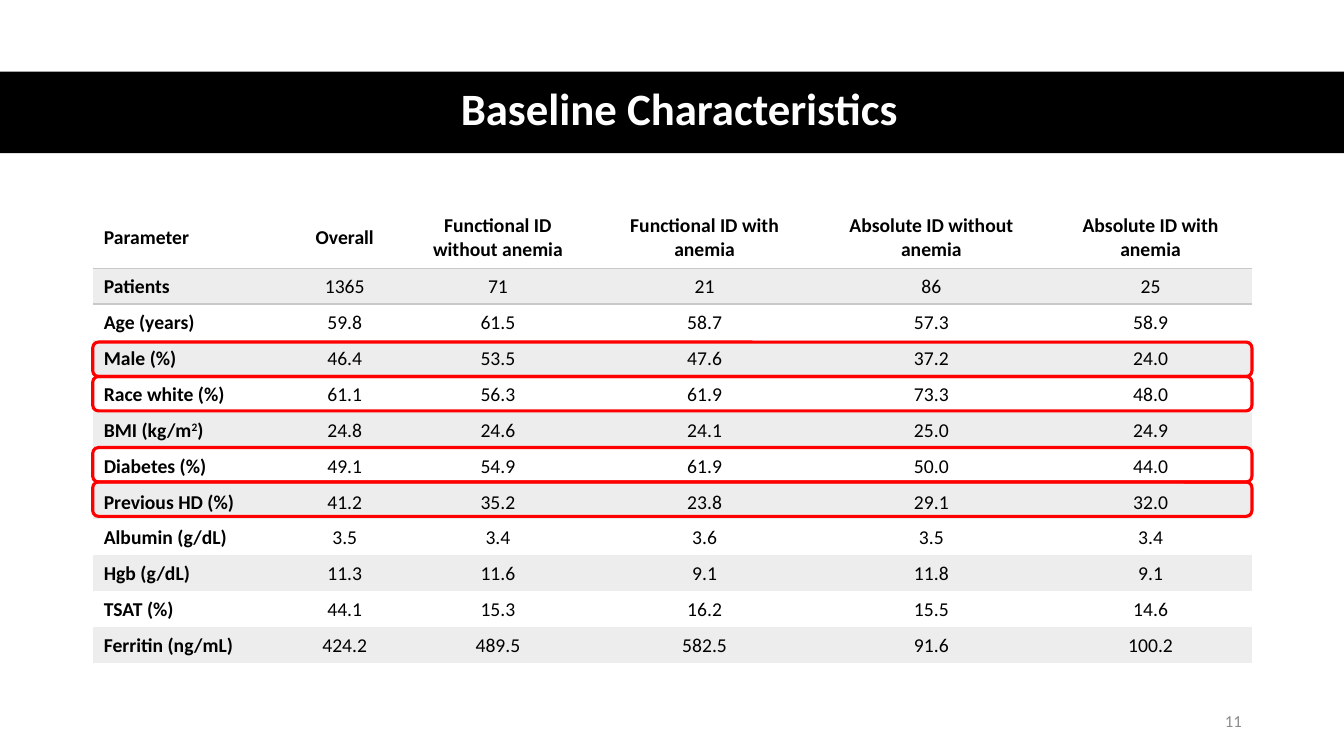
import dataclasses

import lxml.etree
import pptx
import pptx.dml.color
import pptx.enum.shapes
import pptx.enum.text
import pptx.oxml.ns
import pptx.util

ALIGN = pptx.enum.text.PP_ALIGN
MIDDLE = pptx.enum.text.MSO_ANCHOR.MIDDLE
SHAPE = pptx.enum.shapes.MSO_SHAPE
PLAIN_TABLE_STYLE = "{2D5ABB26-0587-4C30-8999-92F81FD0307C}"

SLIDE_WIDTH = pptx.util.Inches(13.33)
SLIDE_HEIGHT = pptx.util.Inches(7.5)

# All lengths below are percent of the slide's width or height.
TABLE_LEFT, TABLE_TOP = 6.9, 27.07
COLUMN_WIDTHS = (14.63, 8.25, 14.55, 16.2, 17.55, 15.07)
HEADER_HEIGHT, ROW_HEIGHT = 8.4, 4.75
HIGHLIGHT_HEIGHT = 4.55
HIGHLIGHT_PAIR_TOPS = (45.25, 59.2)

HEADINGS = (
    "Parameter", "Overall", "Functional ID without anemia",
    "Functional ID with anemia", "Absolute ID without anemia",
    "Absolute ID with anemia",
)
# A label given as a tuple has its second part raised.
MEASUREMENTS = (
    ("Patients", "1365", "71", "21", "86", "25"),
    ("Age (years)", "59.8", "61.5", "58.7", "57.3", "58.9"),
    ("Male (%)", "46.4", "53.5", "47.6", "37.2", "24.0"),
    ("Race white (%)", "61.1", "56.3", "61.9", "73.3", "48.0"),
    (("BMI (kg/m", "2", ")"), "24.8", "24.6", "24.1", "25.0", "24.9"),
    ("Diabetes (%)", "49.1", "54.9", "61.9", "50.0", "44.0"),
    ("Previous HD (%)", "41.2", "35.2", "23.8", "29.1", "32.0"),
    ("Albumin (g/dL)", "3.5", "3.4", "3.6", "3.5", "3.4"),
    ("Hgb (g/dL)", "11.3", "11.6", "9.1", "11.8", "9.1"),
    ("TSAT (%)", "44.1", "15.3", "16.2", "15.5", "14.6"),
    ("Ferritin (ng/mL)", "424.2", "489.5", "582.5", "91.6", "100.2"),
)


@dataclasses.dataclass(frozen=True)
class Theme:
    font: str = "Calibri"
    ink: str = "000000"
    paper: str = "FFFFFF"
    stripe: str = "EDEDED"
    rule: str = "C9C9C9"
    highlight: str = "FF0000"
    muted: str = "8C8C8C"
    title_size: int = 32
    table_size: int = 14
    page_size: int = 12
    rule_width: float = 1
    highlight_width: float = 2.25


THEME = Theme()


def across(percent):
    return round(SLIDE_WIDTH * percent / 100)


def down(percent):
    return round(SLIDE_HEIGHT * percent / 100)


def area(left, top, width, height):
    return across(left), down(top), across(width), down(height)


def rgb(color):
    return pptx.dml.color.RGBColor.from_string(color)


def apply(target, formats):
    for name, value in formats.items():
        setattr(target, name, value)


def write(paragraph, content, size, color, bold=False, align=ALIGN.LEFT):
    """Write a string, or a tuple of strings whose second one is raised."""
    paragraph.alignment = align
    parts = (content,) if isinstance(content, str) else content
    for position, part in enumerate(parts):
        run = paragraph.add_run()
        run.text = part
        apply(run.font, {"name": THEME.font, "size": pptx.util.Pt(size), "bold": bold})
        run.font.color.rgb = rgb(color)
        if position == 1:
            run.font._element.set("baseline", "30000")


def add_label(slide, place, content, size, color, bold=False, align=ALIGN.LEFT):
    frame = slide.shapes.add_textbox(*place).text_frame
    apply(frame, {"word_wrap": True, "vertical_anchor": MIDDLE})
    write(frame.paragraphs[0], content, size, color, bold, align)
    return frame


def add_title(slide):
    band = slide.shapes.add_shape(SHAPE.RECTANGLE, *area(0, 9.47, 100, 10.8))
    band.shadow.inherit = False
    band.fill.solid()
    band.fill.fore_color.rgb = rgb(THEME.ink)
    band.line.fill.background()
    title = add_label(slide, area(4.58, 9.33, 91.95, 10.8), "Baseline Characteristics",
                      THEME.title_size, THEME.paper, bold=True, align=ALIGN.CENTER)
    title.paragraphs[0].line_spacing = 0.9


def add_cell_rule(cell, side):
    """Draw one edge of a cell; side is lnT or lnB."""
    qn = pptx.oxml.ns.qn
    edge = lxml.etree.Element(qn(f"a:{side}"), w=str(pptx.util.Pt(THEME.rule_width)))
    fill = lxml.etree.SubElement(edge, qn("a:solidFill"))
    lxml.etree.SubElement(fill, qn("a:srgbClr"), val=THEME.rule)
    cell._tc.get_or_add_tcPr().insert(0, edge)


def fill_cell(cell, content, row, column):
    apply(cell, {
        "vertical_anchor": MIDDLE,
        "margin_left": pptx.util.Inches(0.11),
        "margin_right": pptx.util.Inches(0.11),
        "margin_top": pptx.util.Inches(0.02),
        "margin_bottom": 0,
    })
    write(cell.text_frame.paragraphs[0], content, THEME.table_size, THEME.ink,
          bold=row == 0 or column == 0,
          align=ALIGN.LEFT if column == 0 else ALIGN.CENTER)
    if row % 2:
        cell.fill.solid()
        cell.fill.fore_color.rgb = rgb(THEME.stripe)
    else:
        cell.fill.background()
    if row < 2:
        add_cell_rule(cell, "lnT" if row else "lnB")


def add_characteristics(slide):
    rows = (HEADINGS, *MEASUREMENTS)
    heights = (HEADER_HEIGHT, *[ROW_HEIGHT] * len(MEASUREMENTS))
    place = area(TABLE_LEFT, TABLE_TOP, sum(COLUMN_WIDTHS), sum(heights))
    table = slide.shapes.add_table(len(rows), len(HEADINGS), *place).table
    apply(table, {"first_row": False, "horz_banding": False})
    table._tbl.tblPr.find(pptx.oxml.ns.qn("a:tableStyleId")).text = PLAIN_TABLE_STYLE
    for column, width in zip(table.columns, COLUMN_WIDTHS):
        column.width = across(width)
    for row, height in zip(table.rows, heights):
        row.height = down(height)
    for row, contents in enumerate(rows):
        for column, content in enumerate(contents):
            fill_cell(table.cell(row, column), content, row, column)


def add_highlight(slide, top):
    place = area(TABLE_LEFT, top, sum(COLUMN_WIDTHS), HIGHLIGHT_HEIGHT)
    outline = slide.shapes.add_shape(SHAPE.ROUNDED_RECTANGLE, *place)
    outline.shadow.inherit = False
    outline.fill.background()
    outline.line.color.rgb = rgb(THEME.highlight)
    outline.line.width = pptx.util.Pt(THEME.highlight_width)


def main():
    deck = pptx.Presentation()
    apply(deck, {"slide_width": SLIDE_WIDTH, "slide_height": SLIDE_HEIGHT})
    slide = deck.slides.add_slide(deck.slide_layouts[6])
    add_title(slide)
    add_characteristics(slide)
    for pair_top in HIGHLIGHT_PAIR_TOPS:
        for position in range(2):
            add_highlight(slide, pair_top + position * HIGHLIGHT_HEIGHT)
    add_label(slide, area(70.65, 92.67, 22.5, 5.33), "11",
              THEME.page_size, THEME.muted, align=ALIGN.RIGHT)
    deck.save("out.pptx")


if __name__ == "__main__":
    main()
